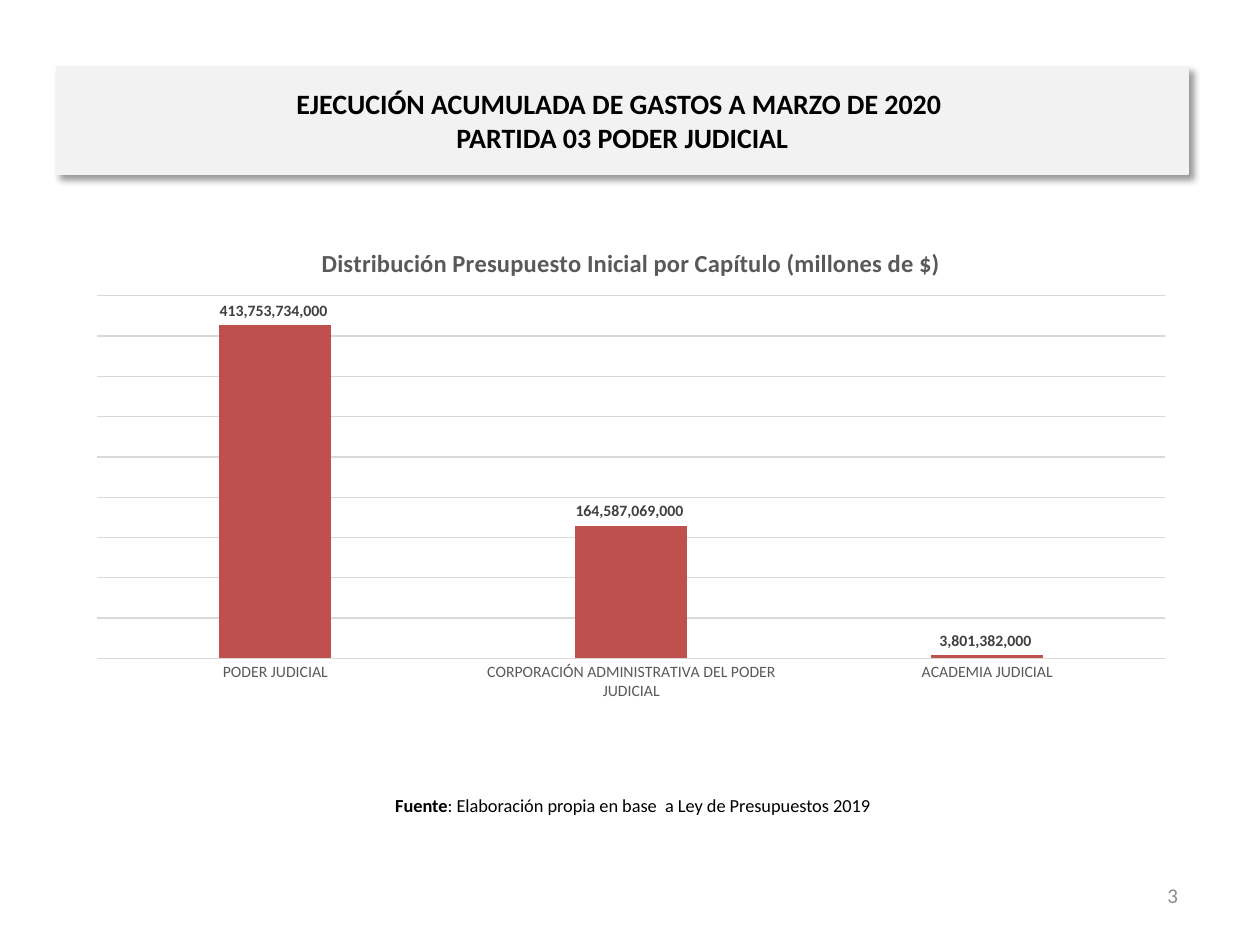
from dataclasses import dataclass

from pptx import Presentation
from pptx.chart.data import CategoryChartData
from pptx.dml.color import RGBColor
from pptx.enum.chart import XL_CHART_TYPE as ChartType, XL_LABEL_POSITION as LabelPosition, XL_TICK_MARK as TickMark
from pptx.enum.shapes import MSO_SHAPE as Preset
from pptx.enum.text import MSO_ANCHOR as Anchor, PP_ALIGN as Align
from pptx.oxml import parse_xml
from pptx.oxml.ns import nsdecls
from pptx.util import Cm, Pt


@dataclass(frozen=True)
class Theme:
    """Colours and type sizes of the slide."""
    font: str = "Calibri"
    ink: str = "000000"
    muted: str = "595959"
    label: str = "404040"
    number: str = "8C8C8C"
    panel: str = "F2F2F2"
    paper: str = "FFFFFF"
    grid: str = "D9D9D9"
    bar: str = "C0504D"
    heading_size: float = 16
    chart_title_size: float = 14
    number_size: float = 12
    source_size: float = 10.5
    chart_size: float = 10
    axis_size: float = 9


THEME = Theme()
BUDGET = {
    "PODER JUDICIAL": 413753734000,
    "CORPORACIÓN ADMINISTRATIVA DEL PODER JUDICIAL": 164587069000,
    "ACADEMIA JUDICIAL": 3801382000,
}
NUMBER_FORMAT = "#,##0_ ;[Red]\\-#,##0\\ "


def style_font(font, size, color, bold=False):
    """Apply the theme typeface with a size, colour and weight."""
    font.name, font.size, font.bold = THEME.font, Pt(size), bold
    font.color.rgb = RGBColor.from_string(color)


def style_line(line, color):
    """Draw a thin solid line."""
    line.color.rgb = RGBColor.from_string(color)
    line.width = Pt(0.75)


def add_heading(slide, box, text):
    """Place the shaded heading panel."""
    shape = slide.shapes.add_shape(Preset.RECTANGLE, *box)
    shape.fill.solid()
    shape.fill.fore_color.rgb = RGBColor.from_string(THEME.panel)
    style_line(shape.line, THEME.panel)
    shape.element.spPr.append(parse_xml(
        f'<a:effectLst {nsdecls("a")}><a:outerShdw blurRad="50800" dist="38100" dir="2700000" '
        'algn="tl" rotWithShape="0"><a:srgbClr val="000000"><a:alpha val="40000"/></a:srgbClr>'
        '</a:outerShdw></a:effectLst>'))
    shape.text_frame.vertical_anchor = Anchor.MIDDLE
    paragraph = shape.text_frame.paragraphs[0]
    paragraph.text = text
    paragraph.alignment = Align.CENTER
    style_font(paragraph.font, THEME.heading_size, THEME.ink, True)


def add_text(slide, box, runs, size, color, alignment):
    """Place one line of text from (text, bold) runs."""
    frame = slide.shapes.add_textbox(*box).text_frame
    frame.word_wrap = True
    frame.vertical_anchor = Anchor.MIDDLE
    paragraph = frame.paragraphs[0]
    paragraph.alignment = alignment
    style_font(paragraph.font, size, color)
    for text, bold in runs:
        run = paragraph.add_run()
        run.text = text
        run.font.bold = bold


def add_budget_chart(slide, box, title, values):
    """Place the column chart of the budget by chapter."""
    data = CategoryChartData(number_format=NUMBER_FORMAT)
    data.categories = list(values)
    data.add_series("Presupuesto Inicial", list(values.values()))
    chart = slide.shapes.add_chart(ChartType.COLUMN_CLUSTERED, *box, data).chart
    style_font(chart.font, THEME.chart_size, THEME.ink)
    chart.has_legend = False
    chart.has_title = True
    heading = chart.chart_title.text_frame.paragraphs[0]
    heading.text = title
    style_font(heading.font, THEME.chart_title_size, THEME.muted, True)

    category_axis, value_axis = chart.category_axis, chart.value_axis
    category_axis.major_tick_mark = TickMark.NONE
    style_font(category_axis.tick_labels.font, THEME.axis_size, THEME.muted)
    style_line(category_axis.format.line, THEME.grid)
    value_axis.visible = False
    value_axis.minimum_scale, value_axis.maximum_scale = 0, 450e9
    value_axis.major_unit = 50e9
    style_line(value_axis.major_gridlines.format.line, THEME.grid)

    plot = chart.plots[0]
    plot.gap_width, plot.overlap = 219, -27
    plot.vary_by_categories = False
    series = plot.series[0]
    series.format.fill.solid()
    series.format.fill.fore_color.rgb = RGBColor.from_string(THEME.bar)
    labels = series.data_labels
    labels.show_value = True
    labels.position = LabelPosition.OUTSIDE_END
    labels.number_format, labels.number_format_is_linked = NUMBER_FORMAT, False
    style_font(labels.font, THEME.axis_size, THEME.label, True)

    solid = f'<a:solidFill><a:srgbClr val="{THEME.paper}"/></a:solidFill>'
    chart.element.chart.addnext(parse_xml(
        f'<c:spPr {nsdecls("c", "a")}>{solid}<a:ln w="9525">{solid}</a:ln></c:spPr>'))


def main():
    """Build the slide and save it."""
    presentation = Presentation()
    presentation.slide_width, presentation.slide_height = Cm(25.4), Cm(19.05)
    slide = presentation.slides.add_slide(presentation.slide_layouts[6])
    add_heading(slide, (Cm(1.14), Cm(1.35), Cm(22.81), Cm(2.16)),
                "EJECUCIÓN ACUMULADA DE GASTOS A MARZO DE 2020 \vPARTIDA 03 PODER JUDICIAL")
    add_budget_chart(slide, (Cm(1.5), Cm(4.52), Cm(22.45), Cm(9.8)),
                     "Distribución Presupuesto Inicial por Capítulo (millones de $)", BUDGET)
    add_text(slide, (Cm(1.09), Cm(15.72), Cm(23.34), Cm(1.02)),
             [("Fuente", True), (": Elaboración propia en base  a Ley de Presupuestos 2019", False)],
             THEME.source_size, THEME.ink, Align.CENTER)
    add_text(slide, (Cm(18.08), Cm(17.53), Cm(5.92), Cm(1.02)), [("3", False)],
             THEME.number_size, THEME.number, Align.RIGHT)
    presentation.save("out.pptx")


if __name__ == "__main__":
    main()
